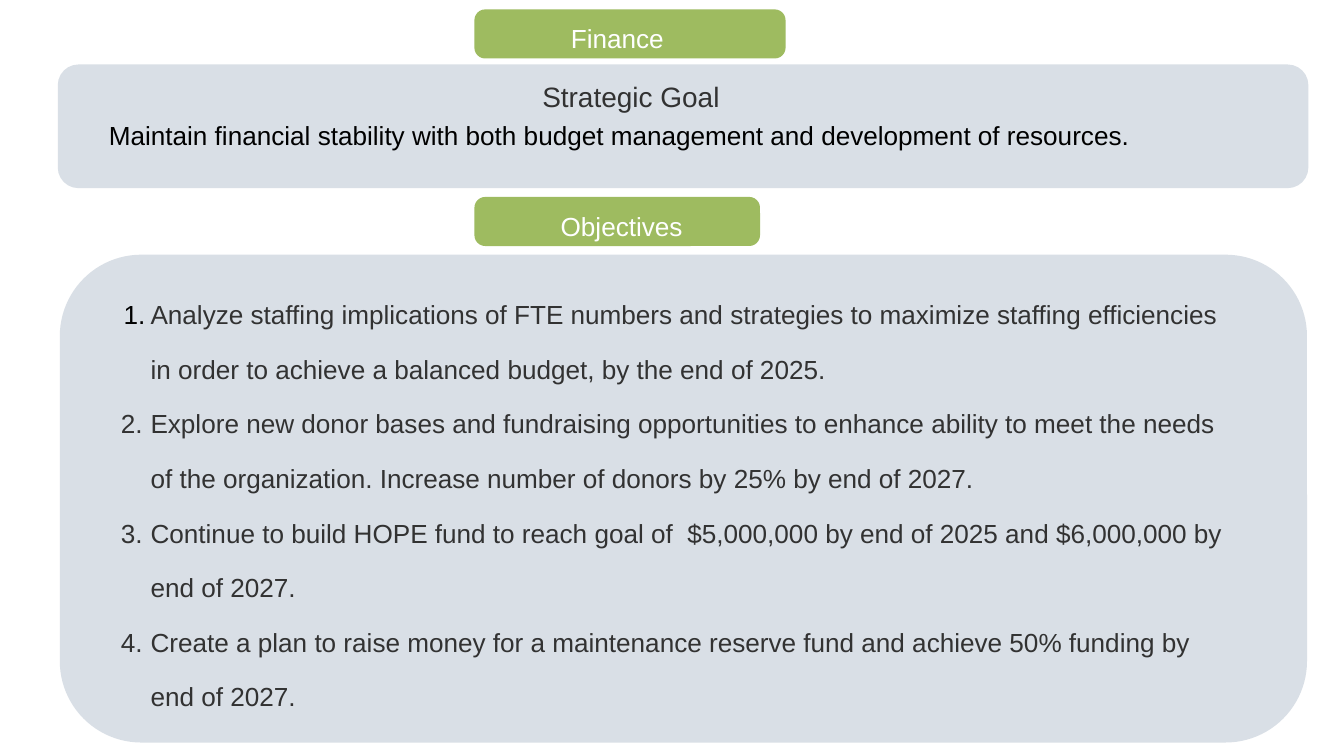
import pptx
import pptx.dml.color
import pptx.enum.shapes
import pptx.enum.text
import pptx.oxml.ns
import pptx.util
from lxml import etree

Pt = pptx.util.Pt
RGBColor = pptx.dml.color.RGBColor
PP_ALIGN = pptx.enum.text.PP_ALIGN

WHITE = RGBColor(0xFF, 0xFF, 0xFF)
BLACK = RGBColor(0x00, 0x00, 0x00)
CHARCOAL = RGBColor(0x32, 0x32, 0x32)
PALE_BLUE = RGBColor(0xD9, 0xDF, 0xE6)
GREEN = RGBColor(0x9E, 0xBB, 0x60)
FONT = "Arial"

OBJECTIVES = [
    "Analyze staffing implications of FTE numbers and strategies to maximize staffing "
    "efficiencies in order to achieve a balanced budget, by the end of 2025.",
    "Explore new donor bases and fundraising opportunities to enhance ability to meet "
    "the needs of the organization. Increase number of donors by 25% by end of 2027.",
    "Continue to build HOPE fund to reach goal of  $5,000,000 by end of 2025 and "
    "$6,000,000 by end of 2027.",
    "Create a plan to raise money for a maintenance reserve fund and achieve 50% "
    "funding by end of 2027.",
]


def place(shape, left, top, width, height):
    """Position a shape, with all lengths in points."""
    shape.left, shape.top = Pt(left), Pt(top)
    shape.width, shape.height = Pt(width), Pt(height)


def add_panel(slide, left, top, width, height, color, corner=0.167):
    """Add a plain rounded rectangle."""
    shape = slide.shapes.add_shape(
        pptx.enum.shapes.MSO_SHAPE.ROUNDED_RECTANGLE,
        Pt(left), Pt(top), Pt(width), Pt(height))
    shape.adjustments[0] = corner
    shape.shadow.inherit = False
    shape.fill.solid()
    shape.fill.fore_color.rgb = color
    shape.line.fill.background()


def write(shape, texts, color, size=28, spacing=1.0, align=PP_ALIGN.LEFT):
    """Fill a text shape with one formatted paragraph per text."""
    frame = shape.text_frame
    frame.word_wrap = True
    frame.auto_size = pptx.enum.text.MSO_AUTO_SIZE.NONE
    frame.vertical_anchor = pptx.enum.text.MSO_ANCHOR.TOP
    frame.margin_left = frame.margin_right = frame.margin_top = frame.margin_bottom = 0
    frame.text = "\n".join(texts)
    for paragraph in frame.paragraphs:
        paragraph.alignment = align
        paragraph.line_spacing = spacing
        for run in paragraph.runs:
            run.font.name = FONT
            run.font.size = Pt(size)
            run.font.color.rgb = color


def add_text(slide, left, top, width, height, texts, color, **style):
    """Add a text box and return it."""
    box = slide.shapes.add_textbox(Pt(left), Pt(top), Pt(width), Pt(height))
    write(box, texts, color, **style)
    return box


def number_paragraph(paragraph, hanging, color):
    """Give a paragraph an automatic number and a hanging indent."""
    properties = paragraph._p.get_or_add_pPr()
    properties.set("marL", str(Pt(36)))
    properties.set("indent", str(-Pt(hanging)))
    qn = pptx.oxml.ns.qn
    marker_color = etree.SubElement(properties, qn("a:buClr"))
    etree.SubElement(marker_color, qn("a:srgbClr"), val=str(color))
    etree.SubElement(properties, qn("a:buFont"), typeface=FONT)
    etree.SubElement(properties, qn("a:buAutoNum"), type="arabicPeriod")


def add_finance_title(slide, left, top, width, height):
    """Place the slide title on its green tab."""
    add_panel(slide, left, top, width, height, GREEN, 0.22)
    title = slide.shapes.title
    slide.shapes._spTree.append(title._element)
    place(title, left + 12.3, top + 5.7, 281.5, 33.8)
    write(title, ["Finance"], WHITE, spacing=1.24, align=PP_ALIGN.CENTER)


def add_goal(slide, left, top, width, height):
    """Add the strategic goal panel with its heading and statement."""
    add_panel(slide, left, top, width, height, PALE_BLUE)
    add_text(slide, left + 519.1, top, 274.3, 52.6, ["Strategic Goal"], CHARCOAL,
             size=30, spacing=1.45)
    add_text(slide, left + 54.7, top + 59, 1230.5, 33.8,
             ["Maintain financial stability with both budget management and "
              "development of resources."], BLACK)


def add_objectives_tab(slide, left, top, width, height):
    """Add the green tab that heads the objectives."""
    add_panel(slide, left, top, width, height, GREEN, 0.22)
    add_text(slide, left + 31.7, top + 0.7, 252, 33.8, ["Objectives"], WHITE,
             spacing=1.4, align=PP_ALIGN.CENTER)


def add_objectives(slide, left, top, width, height):
    """Add the panel with the numbered objectives."""
    add_panel(slide, left, top, width, height, PALE_BLUE)
    box = add_text(slide, left + 61.2, top + 22.3, 1187.3, 477.4, OBJECTIVES, CHARCOAL,
                   spacing=1.74)
    first, *others = box.text_frame.paragraphs
    number_paragraph(first, 28.8, BLACK)
    for paragraph in others:
        number_paragraph(paragraph, 31.7, CHARCOAL)


def main():
    """Build and save the presentation."""
    presentation = pptx.Presentation()
    presentation.slide_width, presentation.slide_height = Pt(1440), Pt(810)
    slide = presentation.slides.add_slide(presentation.slide_layouts[5])
    add_goal(slide, 61.9, 69.1, 1339.9, 132.5)
    add_finance_title(slide, 508.3, 10.1, 333.4, 52.6)
    add_objectives(slide, 64.1, 272.9, 1336.3, 522.7)
    add_objectives_tab(slide, 508.3, 211, 306, 52.6)
    presentation.save("out.pptx")


if __name__ == "__main__":
    main()
